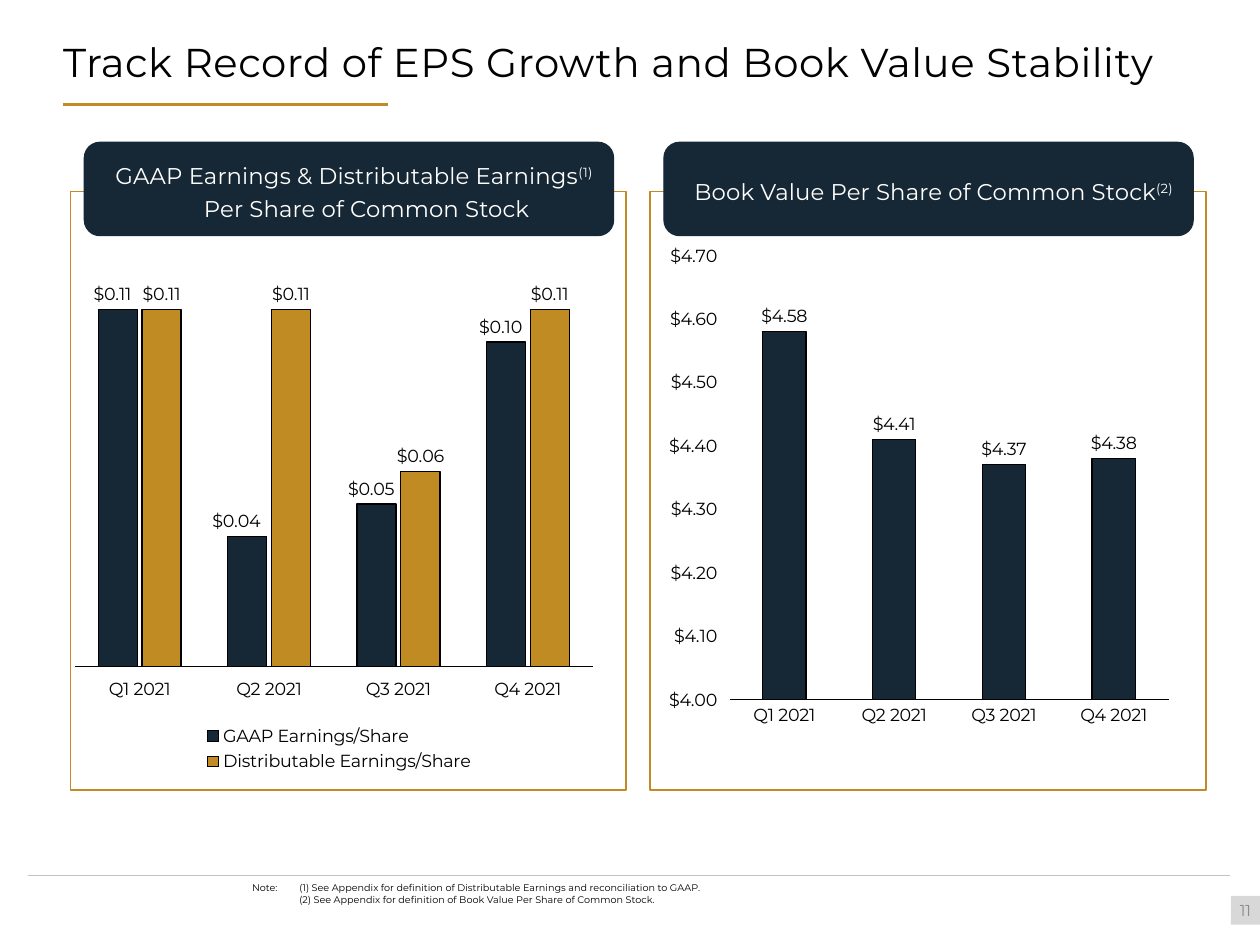
import pptx
import pptx.chart.data
import pptx.dml.color
import pptx.enum.chart
import pptx.enum.shapes
import pptx.enum.text
import pptx.oxml
import pptx.util
from lxml import etree

Pt = pptx.util.Pt
kinds = pptx.enum.shapes.MSO_SHAPE
aligns = pptx.enum.text.PP_ALIGN
enums = pptx.enum.chart
qn = pptx.oxml.ns.qn
hues = {"ink": "020000", "navy": "162835", "gold": "C08B22", "rule": "C2C2C2",
        "tile": "D8D8D8", "gray": "8C8C8C", "white": "FFFFFF"}
rgb = {key: pptx.dml.color.RGBColor.from_string(hue) for key, hue in hues.items()}
money = '"$"#,##0.00'


def write(par, text, size, hue, space=0, base=0):
    run = par.add_run()
    run.text = text
    run.font.size = Pt(size)
    run.font.name = "Montserrat"
    run.font.color.rgb = rgb[hue]
    if space:
        run.font._element.set("spc", str(space))
    if base:
        run.font._element.set("baseline", str(base))


def place(node, spot, **sizes):
    layout = etree.Element(qn("c:layout"))
    manual = etree.SubElement(layout, qn("c:manualLayout"))
    for key, val in sizes.items():
        etree.SubElement(manual, qn("c:" + key)).set("val", str(val))
    for old in node.findall(qn("c:layout")):
        node.remove(old)
    node.insert(spot, layout)


deck = pptx.Presentation()
deck.slide_width, deck.slide_height = Pt(720), Pt(540)
slide = deck.slides.add_slide(deck.slide_layouts[6])
shapes = slide.shapes

for left, top, right, hue, width in [(15.84, 500.4, 702.72, "rule", 0.5),
                                     (36, 59.76, 221.76, "gold", 1.5)]:
    line = shapes.add_connector(pptx.enum.shapes.MSO_CONNECTOR.STRAIGHT,
                                Pt(left), Pt(top), Pt(right), Pt(top))
    line.line.color.rgb = rgb[hue]
    line.line.width = Pt(width)
    etree.SubElement(line._element.spPr, qn("a:effectLst"))

title = shapes.add_textbox(Pt(36), Pt(15.12), Pt(655.92), Pt(61.2))
frame = title.text_frame
frame.word_wrap = True
frame.margin_left = 0
par = frame.paragraphs[0]
par.line_spacing = Pt(30)
write(par, "Track Record of EPS Growth and Book Value Stability", 23, "ink", 30)

tile = shapes.add_shape(kinds.RECTANGLE, Pt(703.44), Pt(511.92), Pt(16.56), Pt(16.56))
tile.shadow.inherit = False
tile.fill.solid()
tile.fill.fore_color.rgb = rgb["tile"]
tile.line.fill.background()
frame = tile.text_frame
frame.margin_left = frame.margin_right = frame.margin_top = frame.margin_bottom = 0
frame.vertical_anchor = pptx.enum.text.MSO_ANCHOR.MIDDLE
frame.paragraphs[0].alignment = aligns.CENTER
write(frame.paragraphs[0], "11", 9, "gray")

charts = [
    {"box": (36.72, 158.4, 308.16, 285.12), "gap": 119, "lap": -12,
     "low": 0, "high": 0.12, "step": 0.02,
     "plot": (0.02, 0, 0.96, 0.78),
     "rows": [("GAAP Earnings/Share", (0.11, 0.04, 0.05, 0.1), "navy"),
              ("Distributable Earnings/Share", (0.11, 0.11, 0.06, 0.11), "gold")]},
    {"box": (371.52, 134.64, 302.4, 285.12), "gap": 154, "lap": -27,
     "low": 4, "high": 4.7, "step": 0.1,
     "plot": (0.15, 0.04, 0.83, 0.89),
     "rows": [("Series 1", (4.58, 4.41, 4.37, 4.38), "navy")]},
]
for item in charts:
    data = pptx.chart.data.CategoryChartData(number_format=money)
    data.categories = [f"Q{num} 2021" for num in range(1, 5)]
    for name, vals, hue in item["rows"]:
        data.add_series(name, vals)
    chart = shapes.add_chart(enums.XL_CHART_TYPE.COLUMN_CLUSTERED,
                             *map(Pt, item["box"]), data).chart
    chart.has_title = False
    chart.font.size = Pt(10)
    chart.font.name = "Montserrat"
    chart.font.color.rgb = rgb["ink"]
    paired = len(item["rows"]) > 1
    chart.has_legend = paired
    if paired:
        chart.legend.position = enums.XL_LEGEND_POSITION.BOTTOM
        chart.legend.include_in_layout = False
        place(chart.legend._element, 1, xMode="edge", yMode="edge",
              x=0.25, y=0.89, w=0.52, h=0.11)
    x, y, w, h = item["plot"]
    place(chart._chartSpace.chart.plotArea, 0, layoutTarget="inner",
          xMode="edge", yMode="edge", x=x, y=y, w=w, h=h)
    cat = chart.category_axis
    cat.major_tick_mark = enums.XL_TICK_MARK.NONE
    cat.format.line.color.rgb = rgb["ink"]
    cat.format.line.width = Pt(0.75)
    if paired:
        cat.tick_label_position = enums.XL_TICK_LABEL_POSITION.LOW
    axis = chart.value_axis
    axis.visible = not paired
    axis.has_major_gridlines = False
    axis.major_tick_mark = enums.XL_TICK_MARK.OUTSIDE
    axis.format.line.fill.background()
    axis.minimum_scale, axis.maximum_scale = item["low"], item["high"]
    axis.major_unit = item["step"]
    axis.tick_labels.number_format = money
    axis.tick_labels.number_format_is_linked = False
    plot = chart.plots[0]
    plot.vary_by_categories = False
    plot.gap_width, plot.overlap = item["gap"], item["lap"]
    for row, (name, vals, hue) in zip(plot.series, item["rows"]):
        row.format.fill.solid()
        row.format.fill.fore_color.rgb = rgb[hue]
        row.format.line.color.rgb = rgb["ink"]
        row.format.line.width = Pt(0.75)
        tags = row.data_labels
        tags.show_value = True
        tags.number_format = money
        tags.number_format_is_linked = False
        tags.position = enums.XL_LABEL_POSITION.OUTSIDE_END
        tags.font.size = Pt(10)
        tags.font.name = "Montserrat"
        tags.font.color.rgb = rgb["ink"]

for num, shift in enumerate((-0.015, -0.02, -0.013, -0.01)):
    tag = shapes[-2].chart.plots[0].series[0].points[num].data_label
    tag.font.size = Pt(10)
    tag.font.name = "Montserrat"
    tag.font.color.rgb = rgb["ink"]
    tag.position = enums.XL_LABEL_POSITION.OUTSIDE_END
    node = tag._dLbl
    place(node, 1, x=round(shift, 2), y=0)
    form = etree.Element(qn("c:numFmt"))
    form.set("formatCode", money)
    form.set("sourceLinked", "0")
    node.insert(2, form)

heads = [
    (40.32, [("GAAP Earnings & Distributable Earnings", 0), ("(1) ", 30000),
             ("Per Share of Common Stock", 0)]),
    (371.52, [("Book Value Per Share of Common Stock", 0), ("(2)", 30000)]),
]
for left, parts in heads:
    panel = shapes.add_shape(kinds.RECTANGLE, Pt(left), Pt(109.44), Pt(317.52), Pt(342))
    panel.shadow.inherit = False
    panel.fill.background()
    panel.line.color.rgb = rgb["gold"]
    panel.line.width = Pt(1)
    head = shapes.add_shape(kinds.ROUNDED_RECTANGLE, Pt(left + 7.92), Pt(81.36),
                            Pt(302.4), Pt(53.28))
    head.shadow.inherit = False
    head.fill.solid()
    head.fill.fore_color.rgb = rgb["navy"]
    head.line.color.rgb = rgb["navy"]
    head.line.width = Pt(0.75)
    frame = head.text_frame
    frame.word_wrap = True
    frame.margin_left = Pt(5.76)
    frame.margin_right = frame.margin_top = frame.margin_bottom = 0
    frame.vertical_anchor = pptx.enum.text.MSO_ANCHOR.MIDDLE
    par = frame.paragraphs[0]
    par.alignment = aligns.CENTER
    par.line_spacing = 1.2
    par._p.get_or_add_pPr().set("marL", str(Pt(14.4)))
    par._p.get_or_add_pPr().set("indent", str(Pt(-14.4)))
    for text, base in parts:
        write(par, text, 13, "white", 10, base)

note = shapes.add_textbox(Pt(144), Pt(504), Pt(547.92), Pt(13.68))
frame = note.text_frame
frame.word_wrap = True
frame.margin_left = frame.margin_right = frame.margin_top = frame.margin_bottom = 0
lines = [
    "Note:\t(1) See Appendix for definition of Distributable Earnings and reconciliation to GAAP.",
    "\t(2) See Appendix for definition of Book Value Per Share of Common Stock.",
]
for num, text in enumerate(lines):
    par = frame.add_paragraph() if num else frame.paragraphs[0]
    props = par._p.get_or_add_pPr()
    props.set("marL", str(Pt(27)))
    props.set("indent", str(Pt(-27)))
    stops = etree.SubElement(props, qn("a:tabLst"))
    stop = etree.SubElement(stops, qn("a:tab"))
    stop.set("pos", str(Pt(27)))
    stop.set("algn", "l")
    write(par, text, 5.5, "ink")

deck.save("out.pptx")
